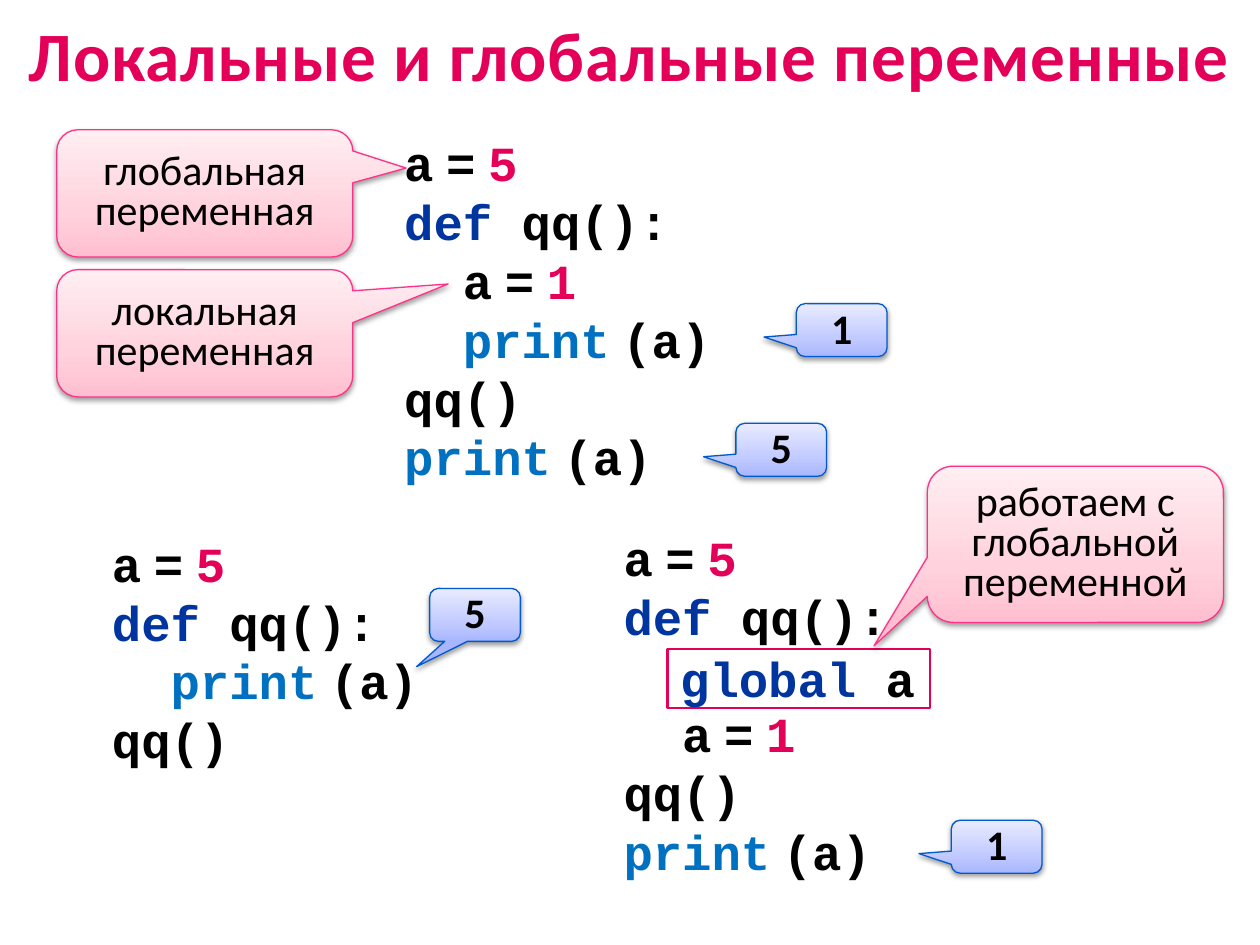
from pptx import Presentation
from pptx.dml.color import RGBColor
from pptx.enum.shapes import MSO_SHAPE
from pptx.enum.text import MSO_ANCHOR, MSO_AUTO_SIZE, PP_ALIGN
from pptx.oxml import parse_xml
from pptx.util import Inches, Pt

CALLOUT = MSO_SHAPE.ROUNDED_RECTANGULAR_CALLOUT
RECT = MSO_SHAPE.RECTANGLE
MIDDLE, TOP = MSO_ANCHOR.MIDDLE, MSO_ANCHOR.TOP
NO_FIT, GROW = MSO_AUTO_SIZE.NONE, MSO_AUTO_SIZE.SHAPE_TO_FIT_TEXT
CENTER, JUSTIFY = PP_ALIGN.CENTER, PP_ALIGN.JUSTIFY
NS = 'xmlns:a="http://schemas.openxmlformats.org/drawingml/2006/main"'

BLACK, CRIMSON, NAVY, BLUE = "000000", "E40059", "00349E", "0070C0"
PINK = (("FFBFD0", "FFD2DD", "FFEEF2"), "FE3288")
VIOLET = (("A8B6FF", "C2CBFF", "E8EBFF"), "0059CE")

# Code tokens are (text, colour, size); spaces around operators are narrow.
CODE_SIZE = 28
GAP = (" ", BLACK, 12)


def token(text, colour=BLACK):
    return text, colour, CODE_SIZE


def assign(value, indent=""):
    return [token(indent + "a"), GAP, token("="), GAP, token(value, CRIMSON)]


def print_a(indent=""):
    return [token(indent + "print", BLUE), GAP, token("(a)")]


DEF_QQ = [token("def ", NAVY), token("qq():")]
CALL_QQ = [token("qq()")]
STEP = "  "
SHADOWING = [assign("5"), DEF_QQ, assign("1", STEP), print_a(STEP),
             CALL_QQ, print_a()]
READING = [assign("5"), DEF_QQ, print_a(STEP), CALL_QQ]
WRITING = [assign("5"), DEF_QQ,
           [token(STEP), token("global", "0000FF"), token(" a")],
           assign("1", STEP), CALL_QQ, print_a()]


def rgb(colour):
    return RGBColor.from_string(colour)


def set_font(font, name, size, colour=BLACK, bold=False):
    font.name, font.size, font.bold = name, Pt(size), bold
    font.color.rgb = rgb(colour)


def add_tokens(p, tokens):
    for text, colour, size in tokens:
        r = p.add_run()
        r.text = text
        set_font(r.font, "Courier New", size, colour, True)


def add_title(s, text):
    title = s.shapes.title
    title.left, title.top = Inches(0), Inches(0)
    title.width, title.height = Inches(10), Inches(0.85)
    tf = title.text_frame
    tf.auto_size, tf.vertical_anchor = NO_FIT, MIDDLE
    p = tf.paragraphs[0]
    p.alignment = CENTER
    r = p.add_run()
    r.text = text
    set_font(r.font, "Calibri", 39.6, CRIMSON, True)
    r.font._element.set("spc", "50")


def add_code(s, left, top, height, lines):
    box = s.shapes.add_textbox(Inches(left), Inches(top),
                               Inches(3.69), Inches(height))
    tf = box.text_frame
    tf.word_wrap, tf.auto_size, tf.vertical_anchor = True, GROW, MIDDLE
    for i, line in enumerate(lines):
        p = tf.add_paragraph() if i else tf.paragraphs[0]
        p.alignment = JUSTIFY
        pPr = p._p.get_or_add_pPr()
        pPr.set("marL", "0")
        pPr.set("indent", str(Inches(0.1)))
        add_tokens(p, line)


def add_callout(s, box, tip, palette, lines, bold=False):
    sp = s.shapes.add_shape(CALLOUT, *map(Inches, box))
    sp.adjustments[0], sp.adjustments[1] = tip
    stops, outline = palette
    gs = "".join(f'<a:gs pos="{pos}000"><a:srgbClr val="{c}"/></a:gs>'
                 for pos, c in zip((0, 35, 100), stops))
    spPr = sp._element.spPr
    spPr.append(parse_xml(
        f'<a:gradFill {NS} rotWithShape="1"><a:gsLst>{gs}</a:gsLst>'
        '<a:lin ang="16200000" scaled="0"/></a:gradFill>'))
    sp.line.color.rgb = rgb(outline)
    sp.line.width = Pt(0.75)
    spPr.append(parse_xml(
        f'<a:effectLst {NS}><a:outerShdw blurRad="{Pt(3.1)}" '
        f'dist="{Pt(1.6)}" dir="5400000" rotWithShape="0">'
        '<a:srgbClr val="000000"><a:alpha val="38000"/></a:srgbClr>'
        '</a:outerShdw></a:effectLst>'))
    tf = sp.text_frame
    tf.word_wrap, tf.vertical_anchor = True, MIDDLE
    for i, line in enumerate(lines):
        p = tf.add_paragraph() if i else tf.paragraphs[0]
        p.text = line
        p.alignment, p.line_spacing = CENTER, 0.8
        set_font(p.font, "Calibri", 24, BLACK, bold)
    return sp


def add_note(s, left, top, height, tip, *lines):
    add_callout(s, (left, top, 2.35, height), tip, PINK, lines)


def add_output(s, left, top, value, tip=(-0.857, 0.131)):
    """Small callout with the value that a print call shows."""
    sp = add_callout(s, (left, top, 0.72, 0.42), tip, VIOLET, [value], True)
    sp.text_frame.margin_top = Inches(0.08)


def add_global_frame(s, left, top):
    sp = s.shapes.add_shape(RECT, Inches(left), Inches(top),
                            Inches(2.08), Inches(0.47))
    sp.shadow.inherit = False
    sp.fill.solid()
    sp.fill.fore_color.rgb = rgb("FFFFFF")
    sp.line.color.rgb = rgb(CRIMSON)
    sp.line.width = Pt(1.5)
    tf = sp.text_frame
    tf.word_wrap, tf.auto_size, tf.vertical_anchor = False, GROW, TOP
    tf.margin_top = tf.margin_bottom = 0
    p = tf.paragraphs[0]
    p.alignment = PP_ALIGN.LEFT
    add_tokens(p, [token("global", NAVY), token(" a")])


def main():
    prs = Presentation()
    prs.slide_width, prs.slide_height = Inches(10), Inches(7.5)
    s = prs.slides.add_slide(prs.slide_layouts[5])
    add_title(s, "Локальные и глобальные переменные")

    add_code(s, 3.01, 0.99, 2.93, SHADOWING)
    add_note(s, 0.45, 1.03, 1.01, (0.68, -0.199), "глобальная переменная")
    add_note(s, 0.45, 2.14, 1.01, (0.822, -0.387), "локальная переменная")
    add_output(s, 6.32, 2.41, "1")
    add_output(s, 5.84, 3.36, "5")

    add_code(s, 0.69, 4.17, 1.99, READING)
    add_output(s, 3.41, 4.67, "5", (-0.643, 0.977))

    add_code(s, 4.75, 4.12, 2.93, WRITING)
    add_output(s, 7.55, 6.51, "1")
    add_global_frame(s, 5.3, 5.15)
    add_note(s, 7.36, 3.7, 1.24, (-0.68, 0.65),
             "работаем с", "глобальной переменной")
    prs.save("out.pptx")


if __name__ == "__main__":
    main()
